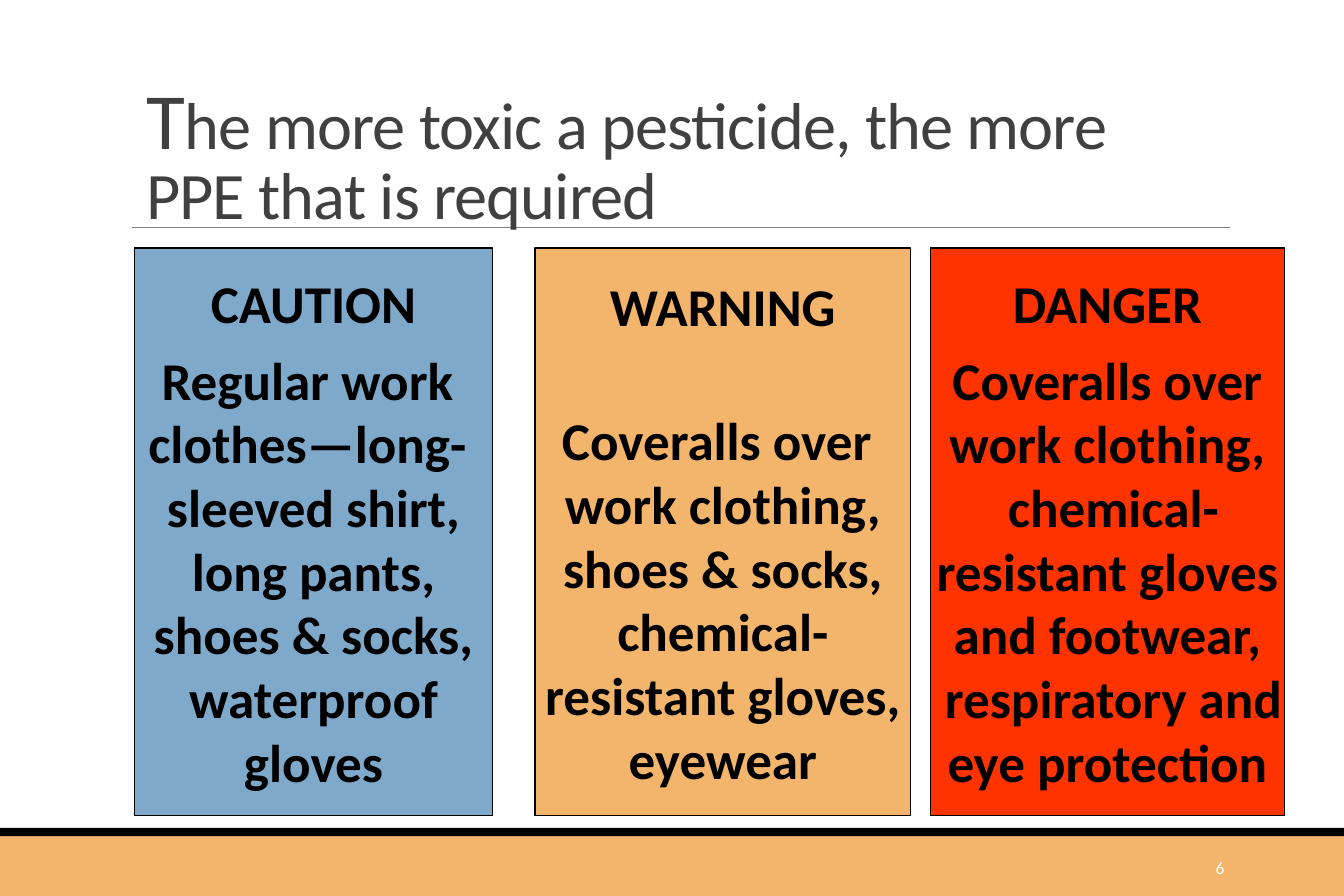
from dataclasses import dataclass

from lxml.etree import SubElement
from pptx import Presentation
from pptx.dml.color import RGBColor
from pptx.enum.shapes import MSO_CONNECTOR as Connector, MSO_SHAPE as Shape
from pptx.enum.text import MSO_ANCHOR as Anchor, PP_ALIGN as Align
from pptx.oxml.ns import qn
from pptx.util import Pt


@dataclass(frozen=True)
class Theme:
    """Colours, font and type sizes of the deck."""
    font: str = "Calibri"
    black: str = "000000"
    white: str = "FFFFFF"
    title: str = "404040"
    rule: str = "808080"
    blue: str = "7EA9CA"
    orange: str = "F3B46C"
    red: str = "FF3300"
    initial_size: float = 48
    title_size: float = 40
    card_size: float = 32
    number_size: float = 10.5


class PageBuilder:
    """Draws styled elements on one page, with lengths in points."""

    def __init__(self, page, theme):
        """Keep the page and its theme."""
        self.page = page
        self.theme = theme

    def style(self, para, color, size=None, bold=False):
        """Set the font of a whole paragraph."""
        font = para.font
        font.name = self.theme.font
        font.bold = bold
        font.color.rgb = RGBColor.from_string(color)
        if size:
            font.size = Pt(size)

    def rectangle(self, left, top, width, height, fill, outline=None):
        """Add a flat rectangle."""
        box = self.page.shapes.add_shape(
            Shape.RECTANGLE, Pt(left), Pt(top), Pt(width), Pt(height))
        box.shadow.inherit = False
        box.fill.solid()
        box.fill.fore_color.rgb = RGBColor.from_string(fill)
        if outline:
            box.line.color.rgb = RGBColor.from_string(outline)
            box.line.width = Pt(0.75)
        else:
            box.line.fill.background()
        return box

    def rule(self, left, right, y):
        """Add a thin horizontal line."""
        line = self.page.shapes.add_connector(
            Connector.STRAIGHT, Pt(left), Pt(y), Pt(right), Pt(y))
        line.line.color.rgb = RGBColor.from_string(self.theme.rule)
        line.line.width = Pt(0.5)
        SubElement(line._element.spPr, qn("a:effectLst"))

    def text_frame(self, left, top, width, height, anchor):
        """Add a wrapping text box and return its frame."""
        box = self.page.shapes.add_textbox(Pt(left), Pt(top), Pt(width), Pt(height))
        frame = box.text_frame
        frame.word_wrap = True
        frame.vertical_anchor = anchor
        return frame

    def title(self, text, left, top, width, height):
        """Add the title with a larger initial letter."""
        para = self.text_frame(left, top, width, height, Anchor.BOTTOM).paragraphs[0]
        para.line_spacing = 0.85
        self.style(para, self.theme.title)
        sizes = (self.theme.initial_size, self.theme.title_size)
        for part, size in zip((text[:1], text[1:]), sizes):
            span = para.add_run()
            span.text = part
            span.font.size = Pt(size)
            span._r.get_or_add_rPr().set("spc", "-50")

    def page_number(self, number, left, top, width, height):
        """Add the right-aligned page number."""
        para = self.text_frame(left, top, width, height, Anchor.MIDDLE).paragraphs[0]
        para.text = str(number)
        para.alignment = Align.RIGHT
        self.style(para, self.theme.white, self.theme.number_size)

    def card(self, left, width, fill, lead_spacing, lines):
        """Add a signal-word card whose second line has its own spacing."""
        box = self.rectangle(left, 149.5, width, 342, fill, self.theme.black)
        frame = box.text_frame
        frame.word_wrap = False
        frame.vertical_anchor = Anchor.MIDDLE
        for index, line in enumerate(lines):
            para = frame.paragraphs[0] if index == 0 else frame.add_paragraph()
            para.text = line
            para.alignment = Align.CENTER
            if index == 1:
                para.line_spacing = lead_spacing
            self.style(para, self.theme.black, self.theme.card_size, bold=True)


def main():
    """Build the slide and save it."""
    deck = Presentation()
    deck.slide_width, deck.slide_height = Pt(810), Pt(540)
    theme = Theme()
    builder = PageBuilder(deck.slides.add_slide(deck.slide_layouts[6]), theme)

    builder.rectangle(0, 504, 810, 36, theme.orange)
    builder.rectangle(0, 499, 810, 5, theme.black)
    builder.rule(79.5, 741.5, 137)
    builder.title("The more toxic a pesticide, the more PPE that is required",
                  81, 36, 639, 108)
    builder.page_number(6, 658, 508.5, 87, 29)

    cards = [
        (81, 216, theme.blue, 1.2,
         ["CAUTION", "Regular work ", "clothes—long- ", "sleeved shirt,",
          "long pants,", "shoes & socks,", "waterproof", "gloves"]),
        (322.5, 226.5, theme.orange, 2.1,
         ["WARNING", "Coveralls over ", "work clothing,", "shoes & socks,",
          "chemical-", "resistant gloves,", "eyewear"]),
        (561, 213, theme.red, 1.2,
         ["DANGER", "Coveralls over", "work clothing,", " chemical-",
          "resistant gloves", "and footwear,", " respiratory and",
          "eye protection"]),
    ]
    for card in cards:
        builder.card(*card)

    deck.save("out.pptx")


if __name__ == "__main__":
    main()
